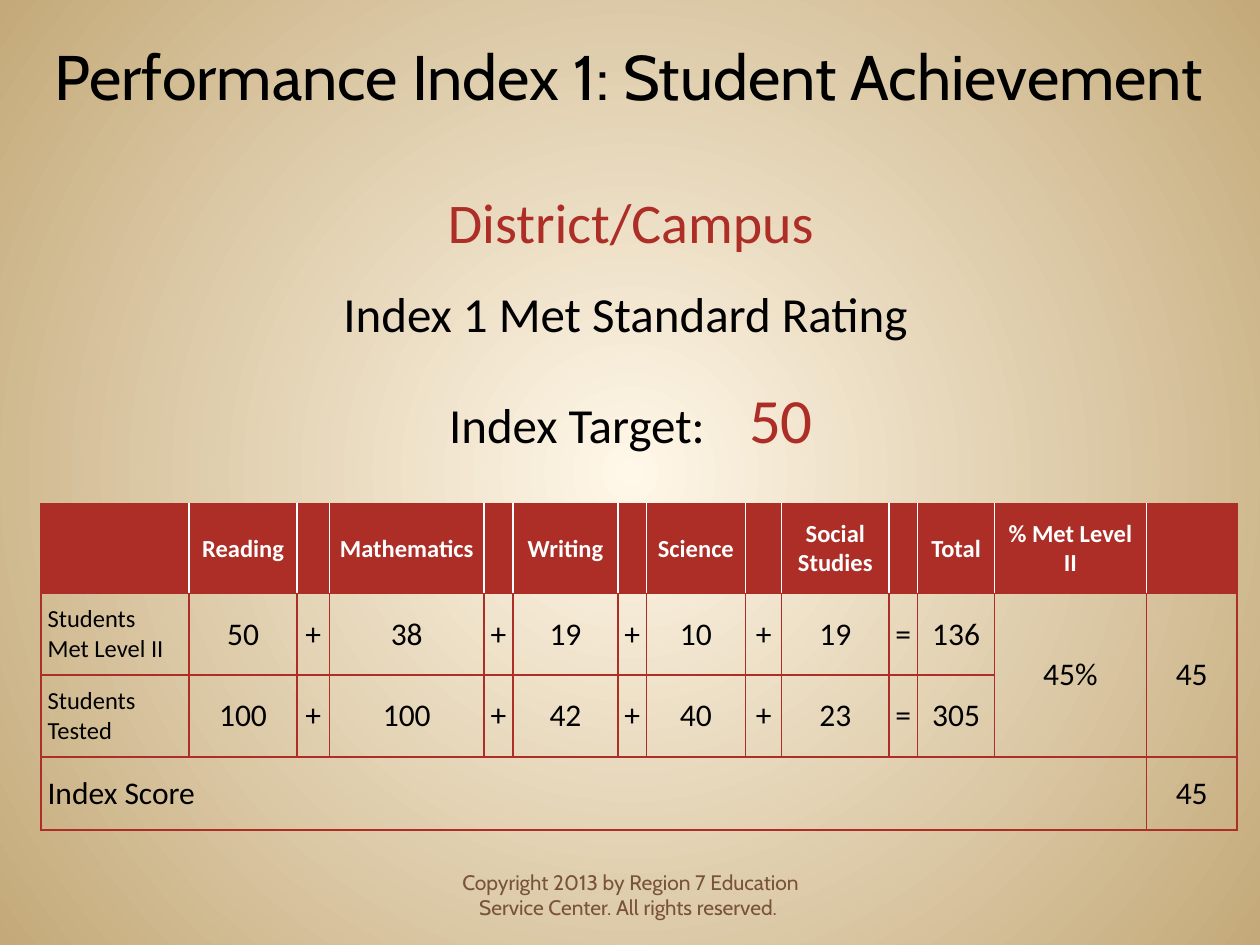
from lxml import etree
from pptx import Presentation
from pptx import util as u
from pptx.dml import color
from pptx.enum import text
from pptx.oxml import ns

RED, WHITE, BLACK, BROWN = "AD2E27", "FFFFFF", "000000", "795339"
MID, LEFT = text.PP_ALIGN.CENTER, text.PP_ALIGN.LEFT


def rgb(code):
    return color.RGBColor.from_string(code)


def sub(node, tag, **attrs):
    return etree.SubElement(node, ns.qn(tag), attrs)


class Deck:
    """Holds the shared style and the current slide."""
    look = {"name": "Calibri", "size": u.Pt(18), "bold": False}

    def __init__(self, wide, high):
        self.prs = Presentation()
        self.prs.slide_width, self.prs.slide_height = u.Cm(wide), u.Cm(high)
        self.slide = self.prs.slides.add_slide(self.prs.slide_layouts[1])

    def glow(self, inner, outer):
        """Radial background, from the centre outwards."""
        fill = self.slide.background.fill
        fill.gradient()
        for stop, code, pos in zip(fill.gradient_stops, (inner, outer), (0, 1)):
            stop.color.rgb, stop.position = rgb(code), pos
        grad = self.slide.background._cSld.find(".//" + ns.qn("a:gradFill"))
        grad.remove(grad.find(ns.qn("a:lin")))
        ring = sub(grad, "a:path", path="circle")
        sub(ring, "a:fillToRect", l="50000", t="50000", r="50000", b="50000")

    def say(self, para, words, ink=BLACK, gap=0, **form):
        run = para.add_run()
        run.text = words
        for key, val in {**self.look, **form}.items():
            setattr(run.font, key, val)
        run.font.color.rgb = rgb(ink)
        if gap:
            run.font._rPr.set("spc", str(gap * 100))

    def frame(self, shape, box, anchor):
        """Place a shape and ready its text frame."""
        for key, val in zip(("left", "top", "width", "height"), box):
            setattr(shape, key, u.Cm(val))
        form = {"word_wrap": True, "auto_size": text.MSO_AUTO_SIZE.NONE,
                "vertical_anchor": anchor}
        for key, val in form.items():
            setattr(shape.text_frame, key, val)
        return shape.text_frame

    def title(self, words, box):
        body = self.frame(self.slide.shapes.title, box, text.MSO_ANCHOR.MIDDLE)
        body.margin_right = 0
        body.paragraphs[0].alignment = LEFT
        self.say(body.paragraphs[0], words, name="Cabin", size=u.Pt(36))

    def lines(self, rows, box):
        """Centred body lines; each line is a list of (words, format)."""
        body = self.frame(self.slide.placeholders[1], box, text.MSO_ANCHOR.TOP)
        for num, runs in enumerate(rows):
            para = body.add_paragraph() if num else body.paragraphs[0]
            form = {"alignment": MID, "line_spacing": 1.5,
                    "space_before": u.Pt(0)}
            for key, val in form.items():
                setattr(para, key, val)
            props = para._p.get_or_add_pPr()
            props.set("marL", "0")
            props.set("indent", "0")
            sub(props, "a:buNone")
            for words, form in runs:
                self.say(para, words, **form)

    def note(self, words, box):
        shape = self.slide.shapes.add_textbox(0, 0, 0, 0)
        body = self.frame(shape, box, text.MSO_ANCHOR.BOTTOM)
        body.paragraphs[0].alignment = MID
        self.say(body.paragraphs[0], words, BROWN, name="Cabin", size=u.Pt(12))

    def grid(self, left, top, cols, rows):
        shape = self.slide.shapes.add_table(
            len(rows), len(cols), u.Cm(left), u.Cm(top),
            u.Cm(sum(cols)), u.Cm(sum(rows)))
        table = shape.table
        table.first_row = table.horz_banding = False
        for col, size in zip(table.columns, cols):
            col.width = u.Cm(size)
        for row, size in zip(table.rows, rows):
            row.height = u.Cm(size)
        return table

    def cell(self, cell, words, fill=None, pads=(0, 0), align=MID, **form):
        cell.margin_left, cell.margin_right = map(u.Cm, pads)
        cell.margin_top = cell.margin_bottom = 0
        cell.vertical_anchor = text.MSO_ANCHOR.MIDDLE
        if fill:
            cell.fill.solid()
            cell.fill.fore_color.rgb = rgb(fill)
        else:
            cell.fill.background()
        body = cell.text_frame
        for num, line in enumerate(words.split("\n") if words else []):
            para = body.add_paragraph() if num else body.paragraphs[0]
            para.alignment = align
            self.say(para, line, **form)

    def edge(self, cell, inks):
        """Border colours in the order left, right, top, bottom."""
        props = cell._tc.get_or_add_tcPr()
        for num, (side, ink) in enumerate(zip("LRTB", inks)):
            line = sub(props, "a:ln" + side, w="12700")
            if ink:
                sub(sub(line, "a:solidFill"), "a:srgbClr", val=ink)
            else:
                sub(line, "a:noFill")
            props.insert(num, line)


def main():
    deck = Deck(25.4, 19.05)
    deck.glow("FFF7E8", "C4AA7A")

    # Heading and rating lines
    deck.title("Performance Index 1: Student Achievement",
               (0.84, 0.61, 23.77, 1.8))
    mid = {"size": u.Pt(28)}
    deck.lines([
        [("District/Campus", {"size": u.Pt(32), "ink": RED})],
        [("Index 1 Met Standard Rating ", mid)],
        [("Index Target:", mid), (" ", {**mid, "gap": 19}),
         ("50", {"size": u.Pt(36), "ink": RED})],
    ], (3.68, 2.97, 18.08, 5.89))

    # Score table: a clear strip, the header, two counts and the score
    cols = [2.98, 2.18, 0.65, 3.12, 0.58, 2.12, 0.57, 2, 0.73, 2.16, 0.58,
            1.55, 3.06, 1.83]
    table = deck.grid(0.83, 9.37, cols, [0.79, 1.8, 1.65, 1.65, 1.47])
    last = len(cols) - 1
    signs = ["+"] * 4 + ["="]

    def count(label, nums, *ends):
        pairs = [item for pair in zip(nums, signs) for item in pair]
        return [label, *pairs, nums[-1], *(ends or ("", ""))]

    heads = ["Reading", "Mathematics", "Writing", "Science", "Social\nStudies"]
    data = [
        [""] * len(cols),
        ["", *(item for head in heads for item in (head, "")),
         "Total", "% Met Level II", ""],
        count("Students Met Level II", ["50", "38", "19", "10", "19", "136"],
              "45%", "45"),
        count("Students Tested", ["100", "100", "42", "40", "23", "305"]),
        ["Index Score", *[""] * (last - 1), "45"],
    ]
    small = {"size": u.Pt(14)}
    for y, row in enumerate(data):
        for x, words in enumerate(row):
            cell = table.cell(y, x)
            form = {"pads": (0, 0) if words in signs else (0.18, 0.18)}
            inks = [RED] * 4
            if y == 0:
                form, inks = {}, [None] * 3 + [RED]
            elif y == 1:
                form.update(small, fill=RED, ink=WHITE, bold=True)
                inks = [WHITE if x else RED, WHITE if x < last else RED, RED, RED]
            elif x == 0:
                form.update(small if y < 4 else {}, pads=(0.13, 0.2), align=LEFT)
            deck.cell(cell, words, **form)
            deck.edge(cell, inks)
    for start, end in [((0, 0), (0, last)), ((2, last - 1), (3, last - 1)),
                       ((2, last), (3, last)), ((4, 0), (4, last - 1))]:
        table.cell(*start).merge(table.cell(*end))

    # Footer
    deck.note("Copyright 2013 by Region 7 Education Service Center. "
              "All rights reserved. ", (8.69, 17.35, 8.05, 1.32))
    deck.prs.save("out.pptx")


if __name__ == "__main__":
    main()
